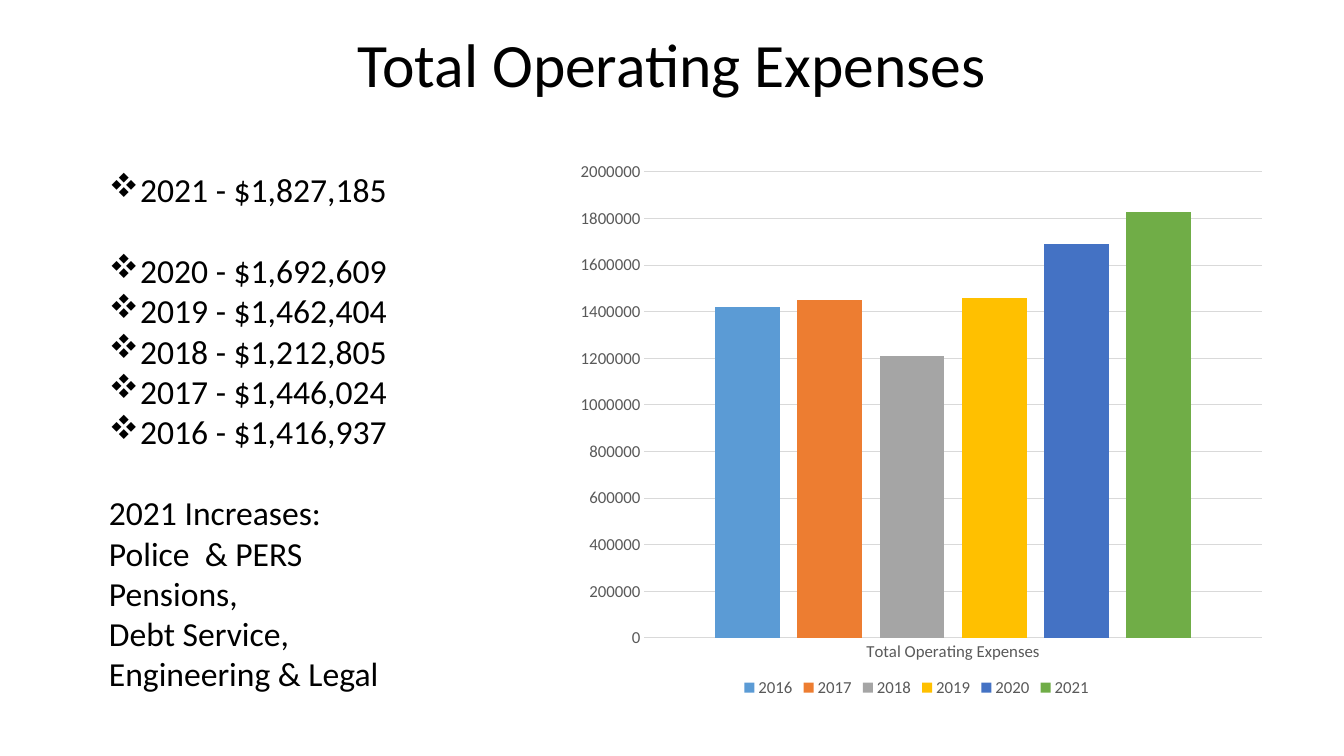
import pptx
import pptx.chart.data
import pptx.dml.color
import pptx.enum.chart
import pptx.enum.text
import pptx.oxml
import pptx.oxml.ns
import pptx.util

WIDTH, HEIGHT = 13.33, 7.5
FONT = "Calibri"
COLORS = {
    "text": "000000", "label": "595959", "grid": "D9D9D9",
    "2016": "5B9BD5", "2017": "ED7D31", "2018": "A5A5A5",
    "2019": "FFC000", "2020": "4472C4", "2021": "70AD47",
}
EXPENSES = {
    "2016": 1416937, "2017": 1446024, "2018": 1212805,
    "2019": 1462404, "2020": 1692609, "2021": 1827185,
}
INCREASES = ["2021 Increases:", "Police  & PERS Pensions,", "Debt Service, Engineering & Legal"]
PLOT_PERCENT = {"x": 10.8, "y": 4.3, "w": 88.9, "h": 84.2}


class ExpenseSlide:
    """Draws text and charts on one slide, placed by percentages of its size."""

    def __init__(self, presentation):
        self.presentation = presentation
        self.slide = presentation.slides.add_slide(presentation.slide_layouts[6])

    def place(self, left, top, width, height):
        column = self.presentation.slide_width / 100
        row = self.presentation.slide_height / 100
        return int(left * column), int(top * row), int(width * column), int(height * row)

    def color(self, name):
        return pptx.dml.color.RGBColor.from_string(COLORS[name])

    def style(self, font, size, color):
        font.name = FONT
        font.size = pptx.util.Pt(size)
        font.color.rgb = self.color(color)

    def text(self, box, lines, size, alignment=pptx.enum.text.PP_ALIGN.LEFT):
        text_frame = self.slide.shapes.add_textbox(*self.place(*box)).text_frame
        text_frame.word_wrap = True
        text_frame.text = "\n".join(lines)
        for paragraph in text_frame.paragraphs:
            paragraph.alignment = alignment
            for run in paragraph.runs:
                self.style(run.font, size, "text")
        return text_frame.paragraphs

    def bullet(self, paragraph, indent=0.31):
        properties = paragraph._p.get_or_add_pPr()
        properties.set("marL", str(pptx.util.Inches(indent)))
        properties.set("indent", str(-pptx.util.Inches(indent)))
        namespace = pptx.oxml.ns.nsdecls("a")
        for tag in ('buFont {} typeface="Wingdings" charset="2"', 'buChar {} char="v"'):
            properties.append(pptx.oxml.parse_xml(f"<a:{tag.format(namespace)}/>"))

    def column_chart(self, box, category, values):
        data = pptx.chart.data.CategoryChartData()
        data.categories = [category]
        for name, value in values.items():
            data.add_series(name, [round(value, -4)])
        kind = pptx.enum.chart.XL_CHART_TYPE.COLUMN_CLUSTERED
        chart = self.slide.shapes.add_chart(kind, *self.place(*box), data).chart
        self.style(chart.font, 10, "text")
        chart.has_title = False

        plot = chart.plots[0]
        plot.gap_width, plot.overlap, plot.vary_by_categories = 219, -27, False
        for series in plot.series:
            series.format.fill.solid()
            series.format.fill.fore_color.rgb = self.color(series.name)

        chart.has_legend = True
        chart.legend.position = pptx.enum.chart.XL_LEGEND_POSITION.BOTTOM
        chart.legend.include_in_layout = False
        self.style(chart.legend.font, 12, "label")

        for axis in (chart.category_axis, chart.value_axis):
            axis.major_tick_mark = pptx.enum.chart.XL_TICK_MARK.NONE
            axis.minor_tick_mark = pptx.enum.chart.XL_TICK_MARK.NONE
            self.style(axis.tick_labels.font, 12, "label")
        value_axis = chart.value_axis
        value_axis.minimum_scale, value_axis.maximum_scale = 0, 2000000
        value_axis.major_unit = 200000
        value_axis.tick_labels.number_format = "General"
        value_axis.tick_labels.number_format_is_linked = False
        value_axis.format.line.fill.background()
        for line in (chart.category_axis.format.line, value_axis.major_gridlines.format.line):
            line.color.rgb = self.color("grid")
            line.width = pptx.util.Pt(0.75)
        self.plot_layout(chart)

    def plot_layout(self, chart):
        modes = "".join(f'<c:{side}Mode val="edge"/>' for side in "xy")
        sizes = "".join(f'<c:{side} val="{percent / 100:.3f}"/>'
                        for side, percent in PLOT_PERCENT.items())
        plot_area = chart._chartSpace.chart.plotArea
        for layout in plot_area.findall(pptx.oxml.ns.qn("c:layout")):
            plot_area.remove(layout)
        plot_area.insert(0, pptx.oxml.parse_xml(
            f'<c:layout {pptx.oxml.ns.nsdecls("c")}><c:manualLayout>'
            f'<c:layoutTarget val="inner"/>{modes}{sizes}</c:manualLayout></c:layout>'))


def main():
    presentation = pptx.Presentation()
    presentation.slide_width = pptx.util.Inches(WIDTH)
    presentation.slide_height = pptx.util.Inches(HEIGHT)
    page = ExpenseSlide(presentation)
    title = "Total Operating Expenses"
    page.text((1.62, 2.8, 96.77, 11.2), [title], 44, pptx.enum.text.PP_ALIGN.CENTER)

    yearly = [f"{year} - ${amount:,}" for year, amount in reversed(EXPENSES.items())]
    paragraphs = page.text((7.37, 21.7, 23.93, 71.33), yearly + INCREASES, 24)
    for group_start in (1, len(yearly)):
        paragraphs[group_start].space_before = pptx.util.Pt(29)
    for paragraph in paragraphs[:len(yearly)]:
        page.bullet(paragraph)

    page.column_chart((42.36, 19.6, 51.69, 73.2), title, EXPENSES)
    presentation.save("out.pptx")


if __name__ == "__main__":
    main()
